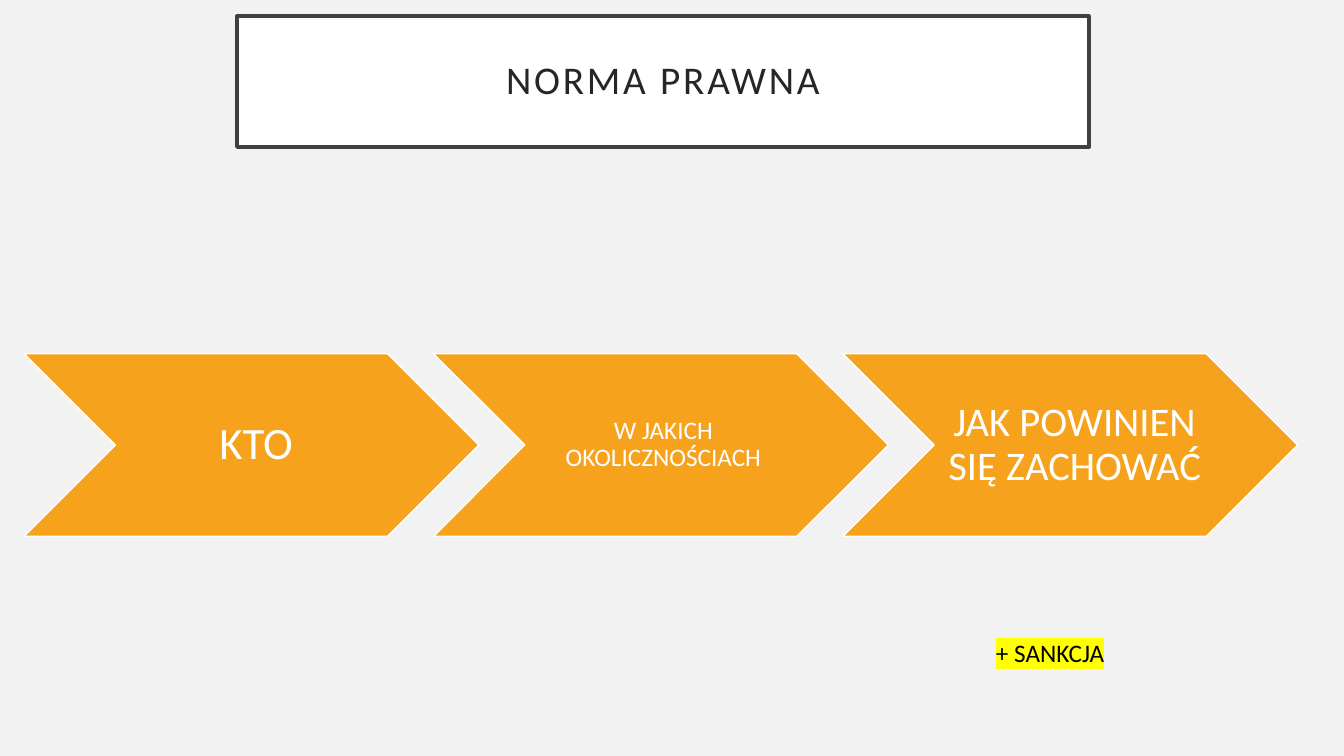
import lxml.etree
import pptx
import pptx.dml.color
import pptx.enum.shapes
import pptx.enum.text
import pptx.oxml.ns
import pptx.util

PX = 9144
FONT = "Calibri"
SHAPES = pptx.enum.shapes.MSO_SHAPE
CENTER = pptx.enum.text.PP_ALIGN.CENTER
LEFT = pptx.enum.text.PP_ALIGN.LEFT
MIDDLE = pptx.enum.text.MSO_ANCHOR.MIDDLE
TOP = pptx.enum.text.MSO_ANCHOR.TOP
STEPS = [
    ("KTO", 32, (14, 5, 5, 5)),
    ("W JAKICH OKOLICZNOŚCIACH", 18, (8, 3, 3, 3)),
    ("JAK POWINIEN SIĘ ZACHOWAĆ", 29, (13, 4, 4, 4)),
]


def color(value):
    """Turn a hex string into a colour."""
    return pptx.dml.color.RGBColor.from_string(value)


def emu(box):
    """Turn px lengths into EMU."""
    return [pptx.util.Emu(length * PX) for length in box]


def write(frame, text, size, ink, insets, align=CENTER, anchor=MIDDLE, spacing=0.9):
    """Fill a text frame with one formatted run and return the run."""
    left, top, right, bottom = emu(insets)
    paragraph = frame.paragraphs[0]
    run = paragraph.add_run()
    formats = [
        (frame, {"word_wrap": True, "vertical_anchor": anchor, "margin_left": left,
                 "margin_top": top, "margin_right": right, "margin_bottom": bottom}),
        (paragraph, {"alignment": align, "line_spacing": spacing}),
        (run, {"text": text}),
        (run.font, {"size": pptx.util.Pt(size), "name": FONT}),
    ]
    for target, values in formats:
        for name, value in values.items():
            setattr(target, name, value)
    run.font.color.rgb = color(ink)
    return run


def add_panel(slide, kind, box, fill, line, width):
    """Add a filled and outlined preset shape."""
    panel = slide.shapes.add_shape(kind, *emu(box))
    panel.shadow.inherit = False
    panel.fill.solid()
    panel.fill.fore_color.rgb = color(fill)
    panel.line.color.rgb = color(line)
    panel.line.width = pptx.util.Pt(width)
    return panel


def add_title(slide, box):
    """Place the framed title with spaced letters."""
    title = add_panel(slide, SHAPES.RECTANGLE, box, "FFFFFF", "404040", 2.5)
    run = write(title.text_frame, "NORMA PRAWNA", 28, "262626", (20, 20, 20, 20))
    run.font._element.set("spc", "200")


def add_steps(slide, box):
    """Place the chevrons in a row, each overlapping the one before by a tenth."""
    left, top, width, height = box
    step_width = round(width / (1 + 0.9 * (len(STEPS) - 1)))
    pitch = round(step_width * 0.9)
    for index, (text, size, insets) in enumerate(STEPS):
        step_box = (left + index * pitch, top, step_width, height)
        step = add_panel(slide, SHAPES.CHEVRON, step_box, "F6A21D", "FFFFFF", 1)
        write(step.text_frame, text, size, "FFFFFF", insets)


def add_sanction(slide, box):
    """Place the highlighted note on the sanction."""
    sanction = slide.shapes.add_textbox(*emu(box))
    run = write(sanction.text_frame, "+ SANKCJA", 18, "000000", (10, 5, 10, 5),
                LEFT, TOP, 1.0)
    sanction.text_frame.auto_size = pptx.enum.text.MSO_AUTO_SIZE.SHAPE_TO_FIT_TEXT
    qn = pptx.oxml.ns.qn
    highlight = lxml.etree.Element(qn("a:highlight"))
    lxml.etree.SubElement(highlight, qn("a:srgbClr"), val="FFFF00")
    run.font._element.find(qn("a:latin")).addprevious(highlight)


def main():
    """Build and save the slide."""
    deck = pptx.Presentation()
    deck.slide_width, deck.slide_height = emu((1333, 750))
    slide = deck.slides.add_slide(deck.slide_layouts[6])
    slide.background.fill.solid()
    slide.background.fill.fore_color.rgb = color("F2F2F2")
    add_title(slide, (235, 16, 845, 130))
    add_steps(slide, (24, 351, 1264, 181))
    add_sanction(slide, (978, 627, 296, 40))
    deck.save("out.pptx")


if __name__ == "__main__":
    main()
